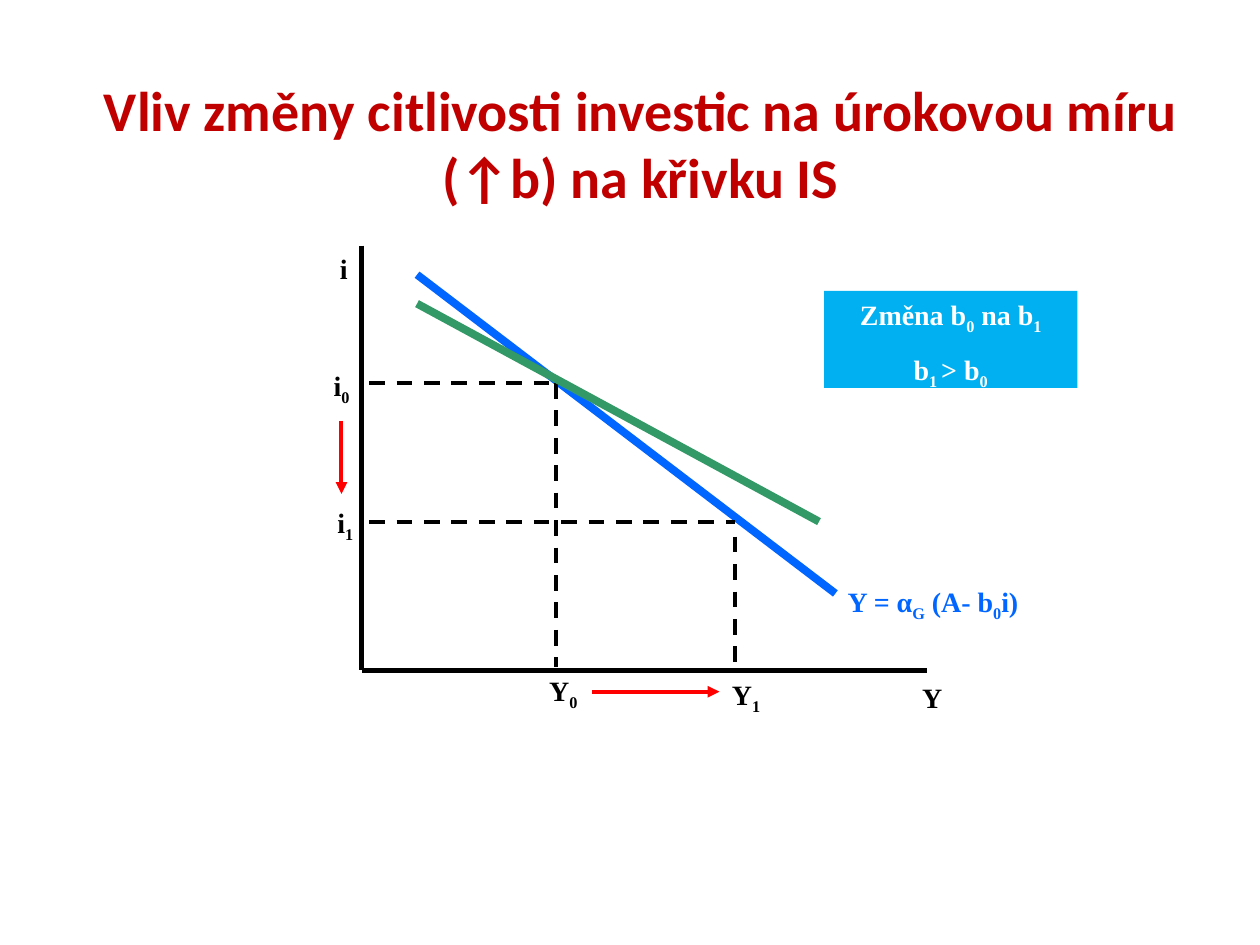
from lxml import etree
from pptx import Presentation
from pptx import util as u
from pptx.dml.color import RGBColor
from pptx.enum import dml, shapes, text
from pptx.oxml.ns import qn

COLUMNS, ROWS = 100, 75
WIDTH, HEIGHT = u.Inches(10), u.Inches(7.5)
COLORS = {"title": "C00000", "axis": "000000", "curve": "0066FF",
          "new_curve": "339966", "change": "FF0000", "note": "00B0F0",
          "note_text": "FFFFFF"}
TITLE_FONT = {"name": "Calibri", "size": u.Pt(32), "bold": True}
LABEL_FONT = {"name": "Times New Roman", "size": u.Pt(16), "bold": True}

AXIS_X, AXIS_Y = 28.7, 53.2
GUIDE_X = 29.3
Y0, Y1 = 44.1, 58.3
I0, I1 = 30.4, 41.4


def color(name):
    """Return the palette colour with this name."""
    return RGBColor.from_string(COLORS[name])


def grid(*values):
    """Turn alternating columns and rows into slide lengths."""
    steps = (WIDTH / COLUMNS, HEIGHT / ROWS)
    return [round(value * steps[index % 2]) for index, value in enumerate(values)]


def apply(target, values):
    """Set every attribute of the target from a dict."""
    for name, value in values.items():
        setattr(target, name, value)


def write(paragraph, content, font, color_name):
    """Write text in which parts between underscores are subscripts."""
    for index, part in enumerate(content.split("_")):
        if part:
            run = paragraph.add_run()
            run.text = part
            apply(run.font, font)
            run.font.color.rgb = color(color_name)
            if index % 2:
                run._r.get_or_add_rPr().set("baseline", "-25000")


def add_title(slide, content, box):
    """Fill and place the title placeholder."""
    title = slide.shapes.title
    apply(title, dict(zip(("left", "top", "width", "height"), grid(*box))))
    apply(title.text_frame, {"word_wrap": True,
                             "auto_size": text.MSO_AUTO_SIZE.NONE,
                             "vertical_anchor": text.MSO_ANCHOR.MIDDLE})
    paragraph = title.text_frame.paragraphs[0]
    paragraph.alignment = text.PP_ALIGN.CENTER
    write(paragraph, content, TITLE_FONT, "title")


def add_line(slide, ends, color_name, width, dashed=False, arrow=False):
    """Draw a straight line between two grid points."""
    line = slide.shapes.add_connector(shapes.MSO_CONNECTOR.STRAIGHT, *grid(*ends))
    line.line.color.rgb = color(color_name)
    line.line.width = u.Pt(width)
    if dashed:
        line.line.dash_style = dml.MSO_LINE.DASH
    if arrow:
        outline = line.line._get_or_add_ln()
        etree.SubElement(outline, qn("a:tailEnd"), type="triangle")
    etree.SubElement(line._element.spPr, qn("a:effectLst"))


def add_label(slide, content, box, color_name="axis"):
    """Add a one-line label."""
    frame = slide.shapes.add_textbox(*grid(*box)).text_frame
    apply(frame, {"word_wrap": True,
                  "auto_size": text.MSO_AUTO_SIZE.SHAPE_TO_FIT_TEXT})
    write(frame.paragraphs[0], content, LABEL_FONT, color_name)


def add_note(slide, lines, box):
    """Add a filled box with centred lines."""
    note = slide.shapes.add_shape(shapes.MSO_SHAPE.RECTANGLE, *grid(*box))
    note.shadow.inherit = False
    note.fill.solid()
    note.fill.fore_color.rgb = color("note")
    note.line.fill.background()
    frame = note.text_frame
    apply(frame, {"word_wrap": True, "vertical_anchor": text.MSO_ANCHOR.TOP})
    for index, content in enumerate(lines):
        paragraph = frame.add_paragraph() if index else frame.paragraphs[0]
        apply(paragraph, {"alignment": text.PP_ALIGN.CENTER,
                          "space_before": u.Pt(10 if index else 0)})
        write(paragraph, content, LABEL_FONT, "note_text")


def main():
    """Build the slide with the shift of the IS curve."""
    presentation = Presentation()
    apply(presentation, {"slide_width": WIDTH, "slide_height": HEIGHT})
    slide = presentation.slides.add_slide(presentation.slide_layouts[5])
    add_title(slide, "Vliv změny citlivosti investic na úrokovou míru "
                     "(↑b) na křivku IS", (5.1, 5.5, 91.5, 11.6))

    for ends in ((AXIS_X, 19.5, AXIS_X, AXIS_Y), (AXIS_X, AXIS_Y, 73.6, AXIS_Y)):
        add_line(slide, ends, "axis", 3)
    add_line(slide, (33.1, 21.8, 66.3, 47.1), "curve", 4.5)
    for ends in ((GUIDE_X, I0, Y0, I0), (Y0, I0, Y0, 52.9),
                 (GUIDE_X, I1, Y1, I1), (Y1, 42.6, Y1, AXIS_Y)):
        add_line(slide, ends, "axis", 2.25, dashed=True)
    for ends in ((27.1, 33.4, 27.1, 39.2), (47, 54.9, 57.1, 54.9)):
        add_line(slide, ends, "change", 2.25, arrow=True)
    add_line(slide, (33.1, 24.1, 65, I1), "new_curve", 4.5)

    for content, left, top, width in (
            ("Y", 72.2, 53.5, 6.5), ("i", 26, 19.5, 2.4),
            ("i_0_", 25.5, 28.8, 4.1), ("i_1_", 25.8, 39.6, 3.7),
            ("Y_0_", 42.6, 53, 5.8), ("Y_1_", 57.1, 53.3, 5.2)):
        add_label(slide, content, (left, top, width, 3.7))
    add_label(slide, "Y = α_G_ (A- b_0_i)", (66.3, 45.9, 17.6, 3.7), "curve")
    add_note(slide, ("Změna b_0_ na b_1_", "b_1 _> b_0_"), (65.4, 23.1, 20.1, 7.7))

    presentation.save("out.pptx")


if __name__ == "__main__":
    main()
